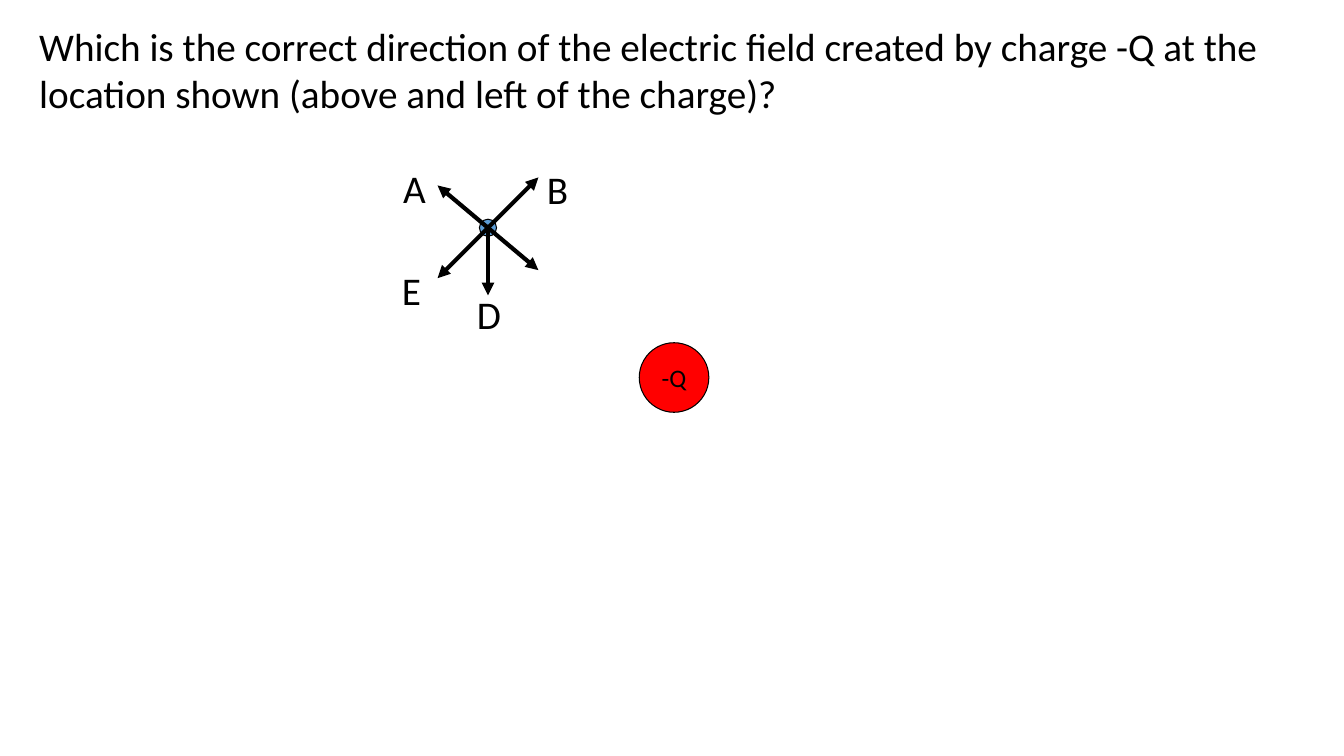
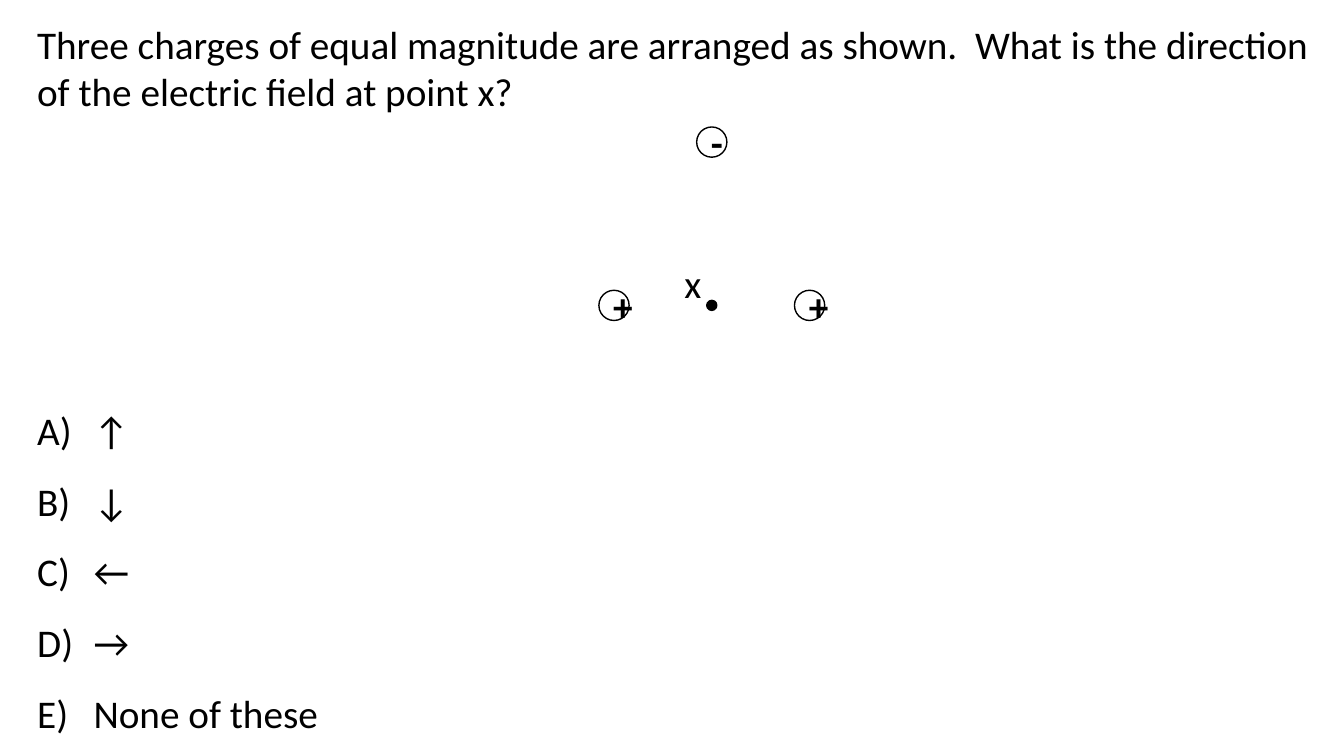
from dataclasses import dataclass

from lxml.etree import SubElement
from pptx import Presentation
from pptx.dml.color import RGBColor
from pptx.enum.shapes import MSO_CONNECTOR as Connector, MSO_SHAPE as Preset
from pptx.enum.text import MSO_ANCHOR as Anchor, MSO_AUTO_SIZE as AutoSize, PP_ALIGN as Align
from pptx.oxml.ns import qn
from pptx.util import Inches, Pt


@dataclass(frozen=True)
class Theme:
    font: str = "Calibri"
    ink: str = "000000"
    paper: str = "FFFFFF"
    point: str = "5B9BD5"
    charge: str = "FF0000"
    body: int = 28
    label: int = 18
    thin: float = 0.75
    outline: float = 1
    arrow: float = 3


THEME = Theme()
WIDTH, HEIGHT = 13.33, 7.5
LINE_HEIGHT = 0.57

FIELD = {
    "question": "Which is the correct direction of the electric field created by charge -Q "
                "at the location shown (above and left of the charge)?",
    "question_box": (0.29, 0.17, 12.72, 1.04),
    "location": (4.84, 2.26),
    "arrows": [(0.5, 0.42), (-0.5, -0.42), (0, 0.67), (0.5, -0.5), (-0.5, 0.5)],
    "letters": [("A", 4.11, 1.58), ("B", 5.53, 1.59), ("D", 4.85, 2.83), ("E", 4.08, 2.59)],
    "charge": ("-Q", 6.685, 3.745),
}
TRIANGLE = {
    "question": "Three charges of equal magnitude are arranged as shown.  "
                "What is the direction of the electric field at point x?",
    "question_box": (0.27, 0.15, 12.93, 1.04),
    "point": (7.06, 3.03),
    "charges": [("+", -0.97, 0), ("-", 0, -1.62), ("+", 0.97, 0)],
    "point_label": ("x", (6.69, 2.52, 0.37, LINE_HEIGHT)),
    "answers": ["↑", "↓", "←", "→", "None of these"],
    "answers_box": (0.27, 3.75, 3.02, 3.64),
}


def assign(target, values):
    for name, value in values.items():
        setattr(target, name, value)


def write(shape, lines, size=THEME.body, bold=False, align=Align.LEFT, **frame_format):
    frame = shape.text_frame
    assign(frame, frame_format)
    frame.text = "\n".join(lines)
    for paragraph in frame.paragraphs:
        paragraph.alignment = align
        font = paragraph.runs[0].font
        assign(font, {"name": THEME.font, "size": Pt(size), "bold": bold})
        font.color.rgb = RGBColor.from_string(THEME.ink)
    return frame


def add_text(slide, box, lines, wrap=False, align=Align.LEFT):
    text_box = slide.shapes.add_textbox(*map(Inches, box))
    return write(text_box, lines, align=align, word_wrap=wrap,
                 auto_size=AutoSize.SHAPE_TO_FIT_TEXT)


def add_circle(slide, x, y, diameter, fill, line_width):
    corner = (x - diameter / 2, y - diameter / 2)
    circle = slide.shapes.add_shape(Preset.OVAL, *map(Inches, (*corner, diameter, diameter)))
    circle.shadow.inherit = False
    circle.fill.solid()
    circle.fill.fore_color.rgb = RGBColor.from_string(fill)
    circle.line.color.rgb = RGBColor.from_string(THEME.ink)
    circle.line.width = Pt(line_width)
    return circle


def add_arrow(slide, x, y, across, down):
    ends = map(Inches, (x, y, x + across, y + down))
    arrow = slide.shapes.add_connector(Connector.STRAIGHT, *ends)
    arrow.line.color.rgb = RGBColor.from_string(THEME.ink)
    arrow.line.width = Pt(THEME.arrow)
    properties = arrow.element.spPr
    SubElement(properties.find(qn("a:ln")), qn("a:tailEnd"), type="triangle")
    SubElement(properties, qn("a:effectLst"))


def number_answers(frame, indent=0.56):
    for paragraph in frame.paragraphs:
        paragraph.line_spacing = 1.5
        properties = paragraph._p.get_or_add_pPr()
        properties.set("marL", str(Inches(indent)))
        properties.set("indent", str(-Inches(indent)))
        SubElement(properties, qn("a:buFont"), typeface=THEME.font)
        SubElement(properties, qn("a:buAutoNum"), type="alphaUcParenR")


def add_question_slide(presentation, content):
    slide = presentation.slides.add_slide(presentation.slide_layouts[6])
    add_text(slide, content["question_box"], [content["question"]], wrap=True)
    return slide


def build_field(presentation):
    slide = add_question_slide(presentation, FIELD)
    add_circle(slide, *FIELD["location"], 0.17, THEME.point, THEME.thin)
    for offset in FIELD["arrows"]:
        add_arrow(slide, *FIELD["location"], *offset)
    letter_width = 0.46
    for letter, center, top in FIELD["letters"]:
        box = (center - letter_width / 2, top, letter_width, LINE_HEIGHT)
        add_text(slide, box, [letter], align=Align.CENTER)
    name, x, y = FIELD["charge"]
    charge = add_circle(slide, x, y, 0.69, THEME.charge, THEME.thin)
    write(charge, [name], THEME.label, align=Align.CENTER,
          word_wrap=False, vertical_anchor=Anchor.MIDDLE)


def build_triangle(presentation):
    slide = add_question_slide(presentation, TRIANGLE)
    x, y = TRIANGLE["point"]
    for sign, across, down in TRIANGLE["charges"]:
        charge = add_circle(slide, x + across, y + down, 0.3, THEME.paper, THEME.outline)
        write(charge, [sign], bold=True, align=Align.CENTER,
              word_wrap=True, vertical_anchor=Anchor.MIDDLE)
    add_circle(slide, x, y, 0.1, THEME.ink, THEME.outline)
    label, box = TRIANGLE["point_label"]
    add_text(slide, box, [label])
    number_answers(add_text(slide, TRIANGLE["answers_box"], TRIANGLE["answers"]))


def main():
    presentation = Presentation()
    assign(presentation, {"slide_width": Inches(WIDTH), "slide_height": Inches(HEIGHT)})
    for build in (build_field, build_triangle):
        build(presentation)
    presentation.save("out.pptx")


if __name__ == "__main__":
    main()
